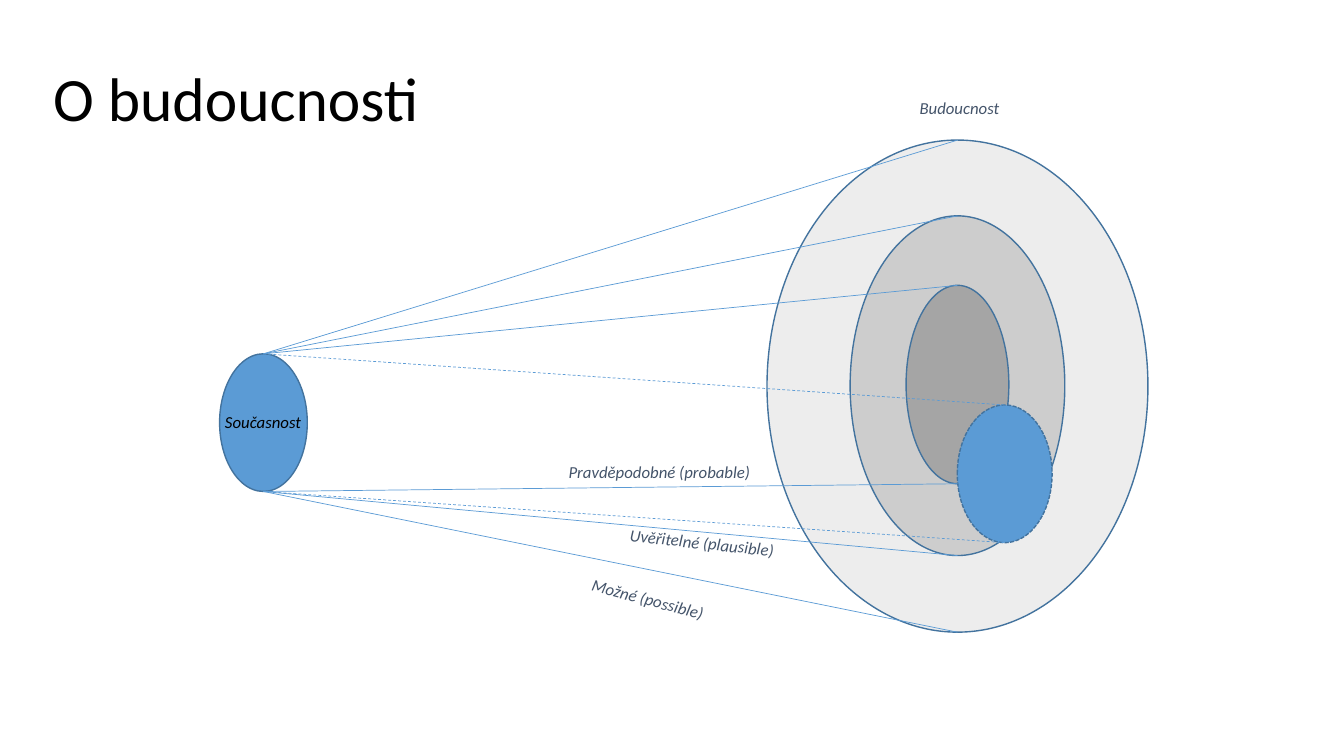
import pptx
import pptx.util
import pptx.dml.color
import pptx.enum.dml
import pptx.enum.shapes
import pptx.enum.text
import pptx.oxml.ns
import lxml.etree

Cm = pptx.util.Cm
Pt = pptx.util.Pt
RGBColor = pptx.dml.color.RGBColor
DASH = pptx.enum.dml.MSO_LINE.DASH
SHORT_DASH = pptx.enum.dml.MSO_LINE.SQUARE_DOT

COLORS = {
    "blue": "5B9BD5",
    "outline": "43739E",
    "gray": "A5A5A5",
    "label": "44546A",
    "black": "000000",
}

presentation = pptx.Presentation()
presentation.slide_width = Cm(33.87)
presentation.slide_height = Cm(19.05)
slide = presentation.slides.add_slide(presentation.slide_layouts[6])


def add_oval(center_x, center_y, width, height, color, opacity, dash):
    shape = slide.shapes.add_shape(
        pptx.enum.shapes.MSO_SHAPE.OVAL,
        Cm(center_x - width / 2), Cm(center_y - height / 2), Cm(width), Cm(height))
    shape.shadow.inherit = False
    shape.fill.solid()
    shape.fill.fore_color.rgb = RGBColor.from_string(COLORS[color])
    if opacity < 100:
        color_element = shape.fill._xPr.find(".//" + pptx.oxml.ns.qn("a:srgbClr"))
        alpha = lxml.etree.SubElement(color_element, pptx.oxml.ns.qn("a:alpha"))
        alpha.set("val", str(opacity * 1000))
    shape.line.color.rgb = RGBColor.from_string(COLORS["outline"])
    shape.line.width = Pt(1)
    shape.line.dash_style = dash


def add_text(text, left, top, width, height, size, color):
    shape = slide.shapes.add_textbox(Cm(left), Cm(top), Cm(width), Cm(height))
    shape.text_frame.vertical_anchor = pptx.enum.text.MSO_ANCHOR.MIDDLE
    paragraph = shape.text_frame.paragraphs[0]
    paragraph.text = text
    paragraph.font.name = "Calibri"
    paragraph.font.size = Pt(size)
    paragraph.font.color.rgb = RGBColor.from_string(COLORS[color])
    return shape, paragraph


present_x, present_y, present_height = 6.64, 10.65, 3.47
futures = [
    (24.13, 9.73, 9.6, 12.4, "gray", 20, None),
    (24.13, 9.72, 5.41, 8.56, "gray", 43, None),
    (24.13, 9.69, 2.59, 5.0, "gray", 100, None),
    (25.32, 11.94, 2.39, present_height, "blue", 100, SHORT_DASH),
]

add_oval(present_x, present_y, 2.21, present_height, "blue", 100, None)
for future in futures:
    add_oval(*future)

for future_x, future_y, width, future_height, color, opacity, dash in futures:
    for side in (-0.5, 0.5):
        connector = slide.shapes.add_connector(
            pptx.enum.shapes.MSO_CONNECTOR.STRAIGHT,
            Cm(present_x), Cm(present_y + side * present_height),
            Cm(future_x), Cm(future_y + side * future_height))
        connector.line.color.rgb = RGBColor.from_string(COLORS["blue"])
        connector.line.width = Pt(0.5)
        connector.line.dash_style = DASH if dash else None
        lxml.etree.SubElement(
            connector._element.spPr, pptx.oxml.ns.qn("a:effectLst"))

labels = [
    ("Uvěřitelné (plausible)", 17.69, 13.67, 4.34, 6, "label"),
    ("Pravděpodobné (probable)", 16.62, 11.89, 5.31, 0, "label"),
    ("Možné (possible)", 16.33, 15.09, 3.56, 15, "label"),
    ("Budoucnost", 24.18, 2.72, 2.54, 0, "label"),
    ("Současnost", 6.63, 10.64, 2.44, 0, "black"),
]
label_height = 0.77
for text, center_x, center_y, width, rotation, color in labels:
    shape, paragraph = add_text(
        text, center_x - width / 2, center_y - label_height / 2,
        width, label_height, 12, color)
    shape.rotation = rotation
    shape.text_frame.word_wrap = False
    shape.text_frame.auto_size = pptx.enum.text.MSO_AUTO_SIZE.SHAPE_TO_FIT_TEXT
    paragraph.font.italic = True
    paragraph.alignment = pptx.enum.text.PP_ALIGN.CENTER

title, paragraph = add_text("O budoucnosti", 1.09, 0.97, 14.38, 3.18, 44, "black")
title.text_frame.word_wrap = True
paragraph.line_spacing = 0.9

presentation.save("out.pptx")
